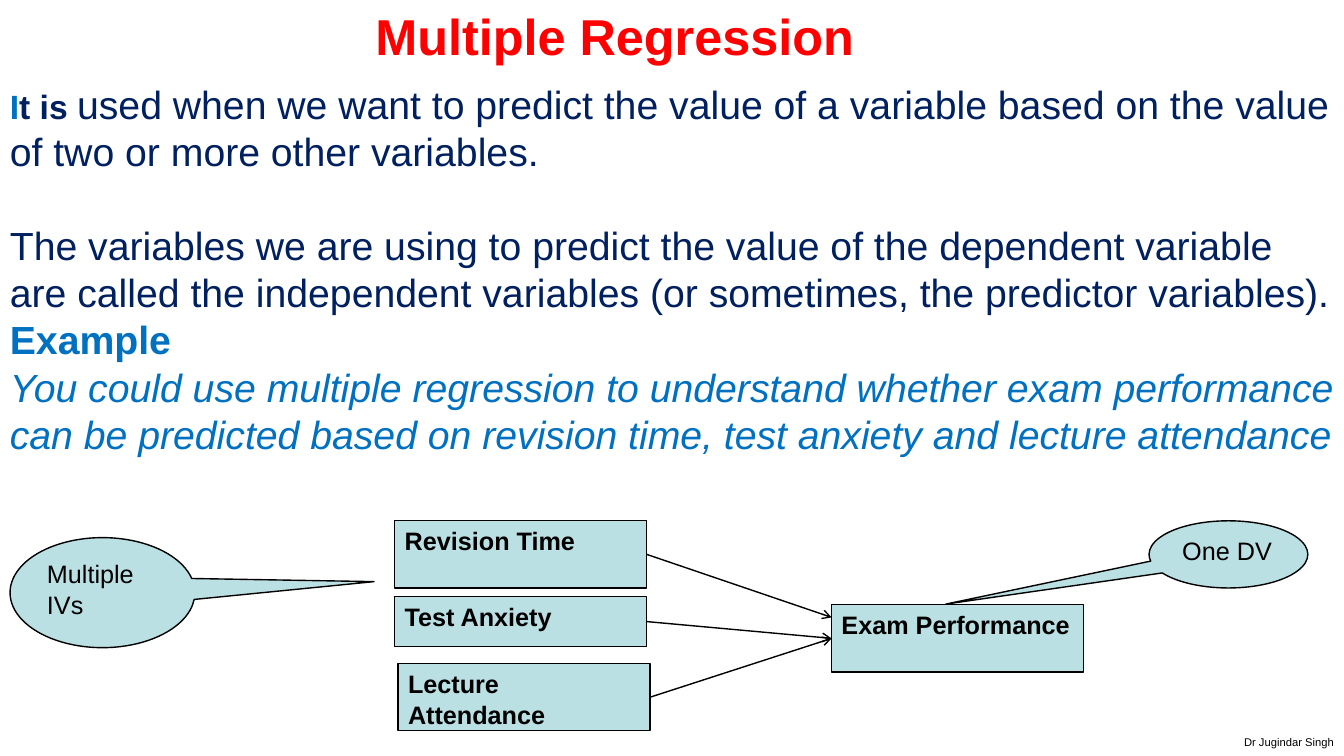
from dataclasses import dataclass

from lxml.etree import SubElement
from pptx import Presentation
from pptx.dml.color import RGBColor as Rgb
from pptx.enum.shapes import MSO_CONNECTOR as Connector, MSO_SHAPE as Preset
from pptx.enum.text import MSO_ANCHOR as Anchor, PP_ALIGN as Align
from pptx.oxml.ns import qn
from pptx.util import Inches, Pt


@dataclass(frozen=True)
class Theme:
    font: str = "Arial"
    red: str = "FF0000"
    navy: str = "002060"
    blue: str = "0070C0"
    black: str = "000000"
    white: str = "FFFFFF"
    pale: str = "BBE0E3"
    title: int = 36
    body: int = 28
    lead: int = 24
    label: int = 18
    footer: int = 8
    line: int = 1
    gap: float = 33.5


THEME = Theme()
WIDTH, HEIGHT = Inches(13.33), Inches(7.5)
COLUMNS, ROWS = 160, 90


def col(count):
    return round(WIDTH * count / COLUMNS)


def row(count):
    return round(HEIGHT * count / ROWS)


def cell(left, top, width, height):
    return col(left), row(top), col(width), row(height)


def style(font, size, color, bold=False, italic=False):
    font.name, font.size = THEME.font, Pt(size)
    font.color.rgb = Rgb.from_string(color)
    font.bold, font.italic = bold, italic


def add_text(slide, area, text, size, color, align, anchor=Anchor.TOP, bold=False):
    frame = slide.shapes.add_textbox(*cell(*area)).text_frame
    frame.word_wrap, frame.vertical_anchor = True, anchor
    paragraph = frame.paragraphs[0]
    paragraph.text, paragraph.alignment = text, align
    style(paragraph.font, size, color, bold)


def add_explanation(slide, area, lead, passages):
    """Add the body: a mixed first paragraph, then (text, color, bold, italic, gap)."""
    panel = slide.shapes.add_textbox(*cell(*area))
    panel.fill.solid()
    panel.fill.fore_color.rgb = Rgb.from_string(THEME.white)
    frame = panel.text_frame
    frame.word_wrap = True
    opening = frame.paragraphs[0]
    for text, size, color, bold in lead:
        run = opening.add_run()
        run.text = text
        style(run.font, size, color, bold)
    for text, color, bold, italic, gap in passages:
        paragraph = frame.add_paragraph()
        paragraph.text, paragraph.space_before = text, Pt(gap)
        style(paragraph.font, THEME.body, color, bold, italic)


def add_label(slide, preset, area, text, bold=False):
    label = slide.shapes.add_shape(preset, *cell(*area))
    label.shadow.inherit = False
    label.fill.solid()
    label.fill.fore_color.rgb = Rgb.from_string(THEME.pale)
    label.line.color.rgb = Rgb.from_string(THEME.black)
    label.line.width = Pt(THEME.line)
    frame = label.text_frame
    frame.word_wrap, frame.vertical_anchor = True, Anchor.TOP
    paragraph = frame.paragraphs[0]
    paragraph.text, paragraph.alignment = text, Align.LEFT
    style(paragraph.font, THEME.label, THEME.black, bold)
    return label


def add_callout(slide, area, text, pointer):
    """Pointer is the tip's offset from the centre, in shares of the callout's size."""
    callout = add_label(slide, Preset.OVAL_CALLOUT, area, text)
    callout.adjustments[0], callout.adjustments[1] = pointer


def add_arrow(slide, start, end):
    arrow = slide.shapes.add_connector(
        Connector.STRAIGHT, col(start[0]), row(start[1]), col(end[0]), row(end[1]))
    arrow.line.color.rgb = Rgb.from_string(THEME.black)
    arrow.line.width = Pt(THEME.line)
    SubElement(arrow.line._get_or_add_ln(), qn("a:tailEnd"), type="arrow")
    SubElement(arrow._element.spPr, qn("a:effectLst"))


def main():
    deck = Presentation()
    deck.slide_width, deck.slide_height = WIDTH, HEIGHT
    slide = deck.slides.add_slide(deck.slide_layouts[6])

    add_text(slide, (27, 0, 92.4, 8.4), "Multiple Regression", THEME.title,
             THEME.red, Align.CENTER, Anchor.MIDDLE, bold=True)
    add_explanation(
        slide, (0, 9, COLUMNS, 52),
        [("I", THEME.lead, THEME.blue, True),
         ("t is ", THEME.lead, THEME.navy, True),
         ("used when we want to predict the value of a variable based on the value "
          "of two or more other variables.", THEME.body, THEME.navy, False)],
        [("The variables we are using to predict the value of the dependent variable "
          "are called the independent variables (or sometimes, the predictor "
          "variables).", THEME.navy, False, False, THEME.gap),
         ("Example", THEME.blue, True, False, 0),
         ("You could use multiple regression to understand whether exam performance "
          "can be predicted based on revision time, test anxiety and lecture "
          "attendance", THEME.blue, False, True, 0)])

    box_width, outcome_left = 30, 99
    add_label(slide, Preset.RECTANGLE, (outcome_left, 72, box_width, 8),
              "Exam Performance", bold=True)
    predictors = [
        ("Revision Time", 47, 62, 8, 66, 73.5),
        ("Test Anxiety", 47, 71, 6, 74, 76),
        ("Lecture Attendance", 47.4, 79, 8, 83, 76),
    ]
    for name, left, top, height, arrow_from, arrow_to in predictors:
        add_label(slide, Preset.RECTANGLE, (left, top, box_width, height), name, bold=True)
        add_arrow(slide, (left + box_width, arrow_from), (outcome_left, arrow_to))

    add_text(slide, (109.3, 86.9, 50.7, 3.1), "Dr Jugindar Singh", THEME.footer,
             THEME.black, Align.RIGHT)
    add_callout(slide, (136.8, 62, 18.9, 8), "One DV", (-1.78, 0.74))
    add_callout(slide, (1.2, 64, 22, 13.1), "Multiple IVs", (1.47, -0.1))
    deck.save("out.pptx")


if __name__ == "__main__":
    main()
